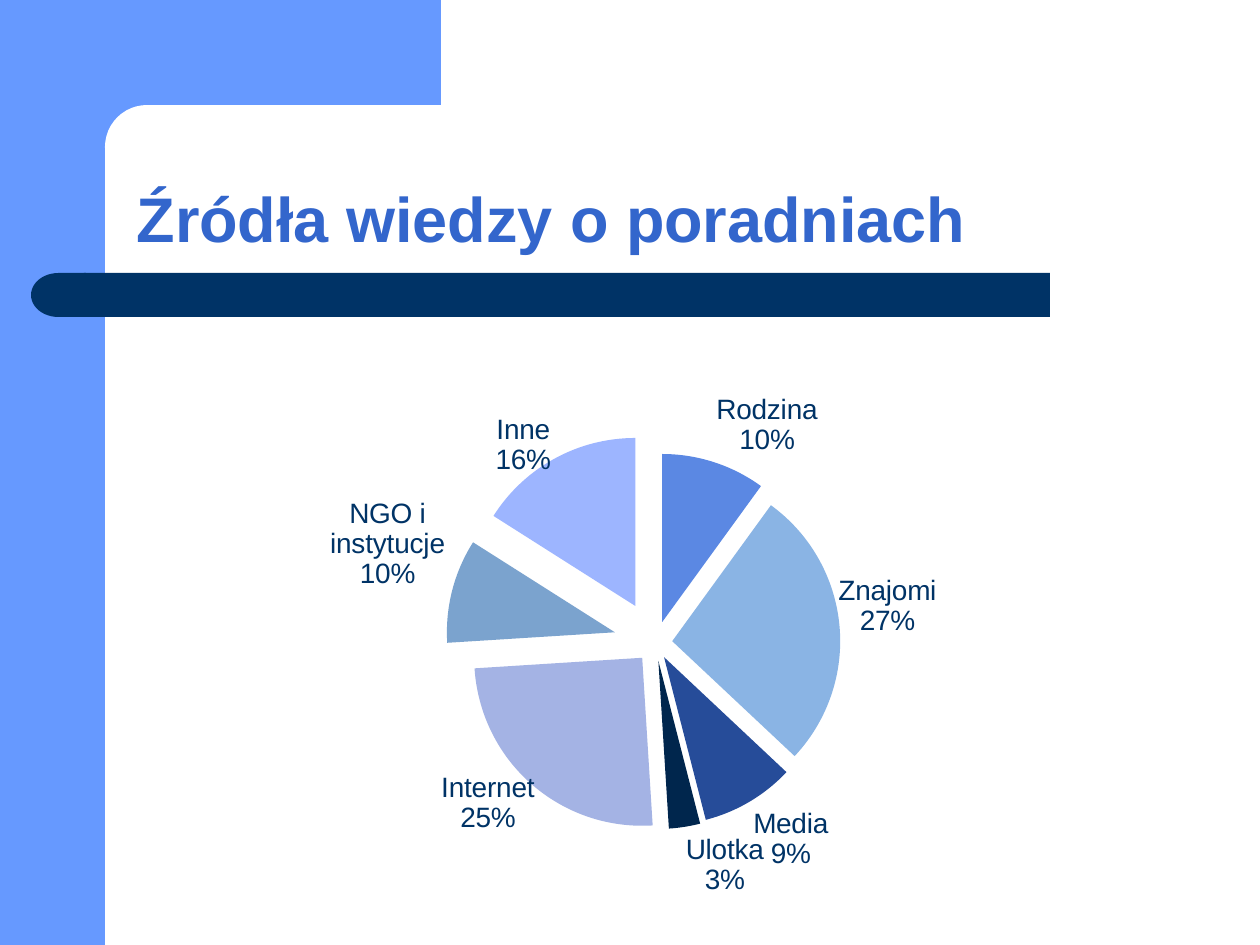
from dataclasses import dataclass
from lxml.etree import SubElement
from pptx import Presentation
from pptx.chart.data import CategoryChartData
from pptx.dml.color import RGBColor as RGB
from pptx.enum.chart import XL_CHART_TYPE as Kind, XL_LABEL_POSITION as Spot
from pptx.enum.shapes import MSO_SHAPE as Form
from pptx.enum.text import MSO_ANCHOR as Anchor, PP_ALIGN as Align
from pptx.oxml import parse_xml
from pptx.oxml.ns import nsdecls, qn
from pptx.util import Pt


@dataclass(frozen=True)
class Theme:
    font: str = "Arial"
    blue: str = "6699FF"
    navy: str = "003366"
    white: str = "FFFFFF"
    head: str = "3366CC"
    head_size: int = 36
    label_size: int = 16


THEME = Theme()
TITLE = "Źródła wiedzy o poradniach"

# name, percent, colour, explosion, label shift (fractions of the chart)
SLICES = [
    ("Rodzina", 10, "5B88E3", 13, None),
    ("Znajomi", 27, "8AB4E4", 10, (-0.01, 0.02)),
    ("Media", 9, "264C99", 10, None),
    ("Ulotka", 3, "00264D", 11, None),
    ("Internet", 25, "A4B3E4", 12, (0.01, -0.03)),
    ("NGO i instytucje", 10, "7BA3CE", 25, None),
    ("Inne", 16, "9DB5FF", 25, (0, 0.04)),
]

# form, box in px, colour, corner rounding
PANELS = [
    (Form.RECTANGLE, (0, 0, 105, 945), THEME.blue, None),
    (Form.RECTANGLE, (95, 0, 346, 147), THEME.blue, None),
    (Form.ROUNDED_RECTANGLE, (105, 105, 703, 84), THEME.white, 0.5),
    (Form.RECTANGLE, (84, 273, 966, 44), THEME.navy, None),
    (Form.FLOWCHART_DELAY, (31, 273, 55, 44), THEME.navy, None),
]
TITLE_BOX = (124, 105, 1105, 157)
CHART_BOX = (223, 363, 840, 559)
PIE_BOX = (488, 475, 336, 336)


def px(n):
    return round(n * 914400 / 126)


def place(shape, box):
    shape.left, shape.top, shape.width, shape.height = map(px, box)


def style(font, size, color, bold=False):
    font.name, font.size, font.bold = THEME.font, Pt(size), bold
    font.color.rgb = RGB.from_string(color)


def paint(fill, color):
    fill.solid()
    fill.fore_color.rgb = RGB.from_string(color)


def layout(**parts):
    """Manual chart layout made of the given parts."""
    body = "".join(f'<c:{k} val="{v}"/>' for k, v in parts.items())
    return parse_xml(f'<c:layout {nsdecls("c")}><c:manualLayout>{body}'
                     "</c:manualLayout></c:layout>")


def show(node):
    """Make a label node show category and percent on two lines."""
    for tag, on in (("showVal", 0), ("showCatName", 1), ("showPercent", 1)):
        node.find(qn("c:" + tag)).set("val", str(on))
    mark = SubElement(node, qn("c:separator"))
    mark.text = "\n"
    last = node.find(qn("c:showBubbleSize"))
    if last is None:
        last = node.find(qn("c:showPercent"))
    last.addnext(mark)


def add_panels(slide):
    for form, box, color, curve in PANELS:
        shape = slide.shapes.add_shape(form, *map(px, box))
        shape.shadow.inherit = False
        paint(shape.fill, color)
        shape.line.fill.background()
        if curve is not None:
            shape.adjustments[0] = curve
        if form == Form.FLOWCHART_DELAY:
            shape._element.spPr.find(qn("a:xfrm")).set("flipH", "1")


def add_title(slide):
    title = slide.shapes.title
    place(title, TITLE_BOX)
    slide.shapes._spTree.append(title._element)
    frame = title.text_frame
    frame.text = TITLE
    frame.vertical_anchor = Anchor.BOTTOM
    para = frame.paragraphs[0]
    para.alignment = Align.LEFT
    para.line_spacing = 0.9
    style(para.runs[0].font, THEME.head_size, THEME.head, True)


def add_pie(slide):
    data = CategoryChartData()
    data.categories = [s[0] for s in SLICES]
    data.add_series("Series 1", [s[1] for s in SLICES])
    chart = slide.shapes.add_chart(Kind.PIE, *map(px, CHART_BOX), data).chart
    chart.has_legend = chart.has_title = False
    style(chart.font, THEME.label_size, THEME.navy)

    left, top, wide, high = CHART_BOX
    x, y, w, h = PIE_BOX
    area = chart._chartSpace.chart.plotArea
    old = area.find(qn("c:layout"))
    if old is not None:
        area.remove(old)
    area.insert(0, layout(
        layoutTarget="inner", xMode="edge", yMode="edge",
        x=round((x - left) / wide, 3), y=round((y - top) / high, 3),
        w=round(w / wide, 3), h=round(h / high, 3)))

    plot = chart.plots[0]
    plot.vary_by_categories = True
    series = plot.series[0]
    labels = series.data_labels
    style(labels.font, THEME.label_size, THEME.navy)
    labels.position = Spot.OUTSIDE_END
    labels.show_percentage = labels.show_category_name = True
    for i, (_, _, color, burst, shift) in enumerate(SLICES):
        point = series.points[i]
        paint(point.format.fill, color)
        point.format.line.fill.background()
        dot = series._element.findall(qn("c:dPt"))[i]
        dot.find(qn("c:spPr")).addprevious(
            parse_xml(f'<c:explosion {nsdecls("c")} val="{burst}"/>'))
        if shift:
            label = point.data_label
            style(label.font, THEME.label_size, THEME.navy)
            label.position = Spot.OUTSIDE_END
            node = labels._element.xpath(f"c:dLbl[c:idx/@val='{i}']")[0]
            node.find(qn("c:idx")).addnext(layout(x=shift[0], y=shift[1]))
            show(node)
    show(labels._element)
    lead = labels._element.find(qn("c:showLeaderLines"))
    if lead is None:
        lead = SubElement(labels._element, qn("c:showLeaderLines"))
    lead.set("val", "0")


def main():
    deck = Presentation()
    deck.slide_width, deck.slide_height = px(1260), px(945)
    slide = deck.slides.add_slide(deck.slide_layouts[5])
    add_panels(slide)
    add_title(slide)
    add_pie(slide)
    deck.save("out.pptx")


if __name__ == "__main__":
    main()
